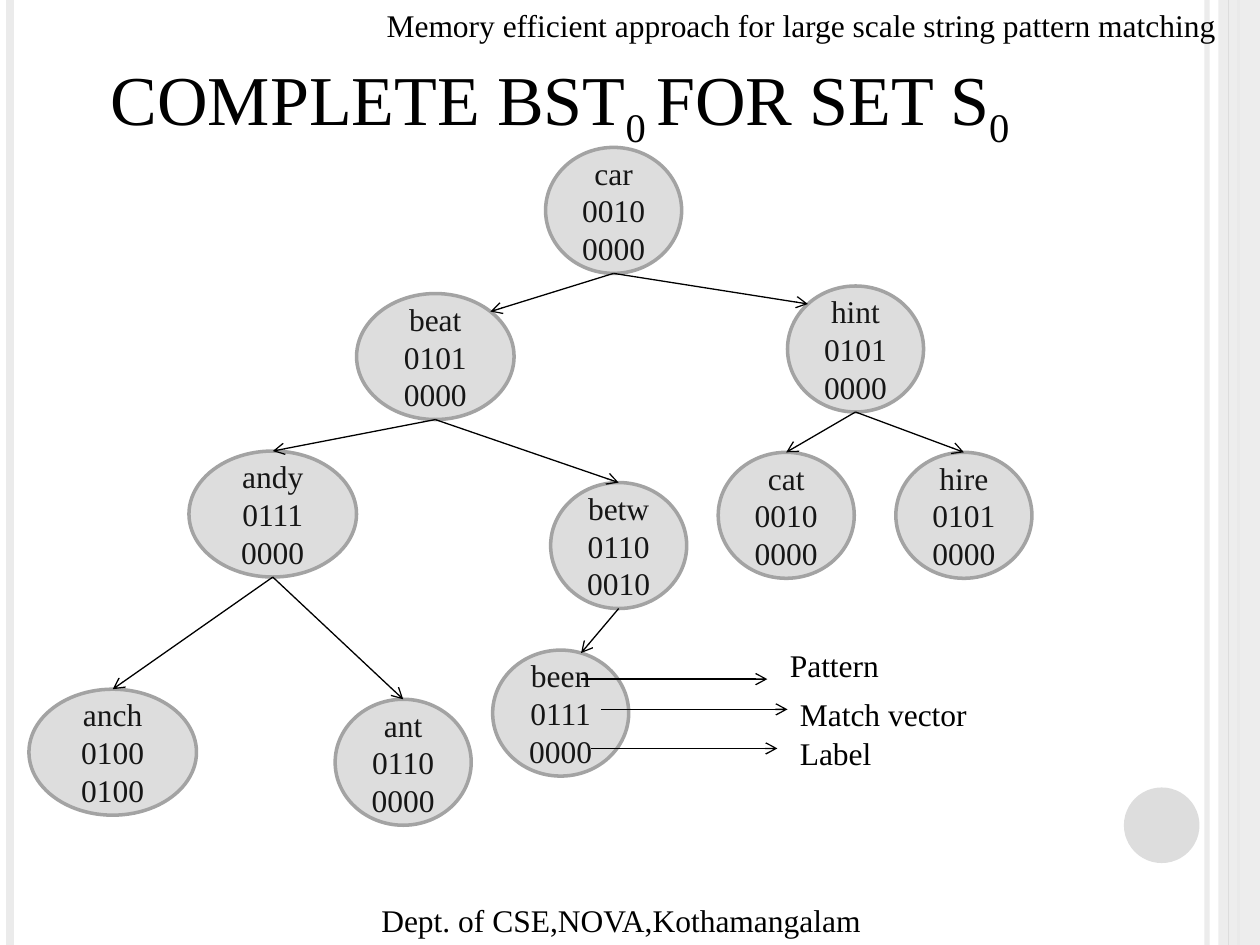
"""Builds a slide that shows the complete binary search tree for a pattern set."""
from math import sqrt

from pptx import Presentation
from pptx.dml.color import RGBColor
from pptx.enum.shapes import MSO_CONNECTOR, MSO_SHAPE
from pptx.enum.text import MSO_ANCHOR, PP_ALIGN
from pptx.oxml.ns import qn
from pptx.util import Inches, Pt
from lxml.etree import SubElement

COLORS = {"text": "000000", "node_text": "161616", "node": "DDDDDD",
          "outline": "A3A3A3", "rail": "EBEBEB", "thin_rail": "DDDDDD"}
FONT = "Times New Roman"
NODE_HEIGHT = 1
SHOULDER = 0.15

NODES = {
    "car": (4.33, 1.17, 1.08, ["00100000"]),
    "beat": (2.83, 2.33, 1.25, ["0101", "0000"]),
    "andy": (1.5, 3.58, 1.33, ["0111", "0000"]),
    "anch": (0.23, 5.47, 1.33, ["0100", "0100"]),
    "ant": (2.66, 5.55, 1.08, ["0110", "0000"]),
    "betw": (4.37, 3.83, 1.08, ["0110", "0010"]),
    "hint": (6.25, 2.27, 1.08, ["0101", "0000"]),
    "cat": (5.7, 3.59, 1.08, ["0010", "0000"]),
    "hire": (7.11, 3.59, 1.08, ["0101", "0000"]),
    "been": (3.91, 5.16, 1.08, ["0111", "0000"]),
}
EDGES = [
    ("car", "beat", 1 - SHOULDER), ("car", "hint", SHOULDER),
    ("beat", "andy", 0.5), ("beat", "betw", 0.5),
    ("andy", "anch", 0.5), ("andy", "ant", 0.5),
    ("hint", "cat", 0.5), ("hint", "hire", 0.5),
    ("betw", "been", 0.65),
]
LEGEND = [
    ("Pattern", 6.17, 5.08, 4.61, 5.39),
    ("Match vector", 6.25, 5.47, 4.77, 5.63),
    ("Label", 6.25, 5.78, 4.69, 5.94),
]
LEGEND_ARROW = 1.48


def add_span(para, text, size=18, color="text", baseline=0):
    """Add a formatted run to a paragraph."""
    span = para.add_run()
    span.text = text
    span.font.name = FONT
    span.font.size = Pt(size)
    span.font.color.rgb = RGBColor.from_string(COLORS[color])
    if baseline:
        span.font._element.set("baseline", str(baseline * 1000))


def set_opacity(element, percent):
    """Give the first colour of an element an opacity."""
    color = element.xpath(".//a:srgbClr")[0]
    SubElement(color, qn("a:alpha")).set("val", str(percent * 1000))


class TreeSlide:
    """Holds the style and the current slide."""

    def __init__(self, deck):
        """Start a page with only a title."""
        self.page = deck.slides.add_slide(deck.slide_layouts[5])

    def title(self, spans, left, top, width, height):
        """Fill the title placeholder with (text, baseline) spans."""
        box = self.page.shapes.title
        box.left, box.top = Inches(left), Inches(top)
        box.width, box.height = Inches(width), Inches(height)
        box.text_frame.vertical_anchor = MSO_ANCHOR.TOP
        para = box.text_frame.paragraphs[0]
        para.alignment = PP_ALIGN.LEFT
        for text, baseline in spans:
            add_span(para, text, size=40, baseline=baseline)

    def text(self, text, left, top, width, align=PP_ALIGN.LEFT):
        """Add a single line of text."""
        box = self.page.shapes.add_textbox(
            Inches(left), Inches(top), Inches(width), Inches(0.4))
        box.text_frame.word_wrap = True
        para = box.text_frame.paragraphs[0]
        para.alignment = align
        add_span(para, text)

    def shape(self, kind, left, top, width, height, fill, outline=None):
        """Add a flat preset shape."""
        shape = self.page.shapes.add_shape(
            kind, Inches(left), Inches(top), Inches(width), Inches(height))
        shape.shadow.inherit = False
        shape.fill.solid()
        shape.fill.fore_color.rgb = RGBColor.from_string(COLORS[fill])
        if outline:
            shape.line.color.rgb = RGBColor.from_string(COLORS[outline])
            shape.line.width = Pt(2)
        else:
            shape.line.fill.background()
        return shape

    def node(self, name):
        """Add a tree node with its pattern, match vector and label."""
        left, top, width, bits = NODES[name]
        shape = self.shape(MSO_SHAPE.OVAL, left, top, width, NODE_HEIGHT,
                           "node", "outline")
        frame = shape.text_frame
        frame.word_wrap = True
        frame.vertical_anchor = MSO_ANCHOR.MIDDLE
        for index, text in enumerate([name] + bits):
            para = frame.add_paragraph() if index else frame.paragraphs[0]
            para.alignment = PP_ALIGN.CENTER
            add_span(para, text, color="node_text")

    def line(self, start, end, color="text", weight=0.75):
        """Add a straight line between two points."""
        line = self.page.shapes.add_connector(
            MSO_CONNECTOR.STRAIGHT, *map(Inches, start + end))
        line.line.color.rgb = RGBColor.from_string(COLORS[color])
        line.line.width = Pt(weight)
        SubElement(line._element.spPr, qn("a:effectLst"))
        return line

    def arrow(self, start, end):
        """Add a line with an open head at its end."""
        outline = self.line(start, end).line._get_or_add_ln()
        SubElement(outline, qn("a:tailEnd")).set("type", "arrow")

    def edge(self, parent, child, across):
        """Point from the foot of a parent to the upper rim of a child."""
        left, top, width, _ = NODES[parent]
        start = (left + width / 2, top + NODE_HEIGHT)
        left, top, width, _ = NODES[child]
        drop = NODE_HEIGHT / 2 * (1 - sqrt(1 - (2 * across - 1) ** 2))
        self.arrow(start, (left + width * across, top + drop))

    def rail(self, x, color, weight):
        """Add a vertical line over the full height."""
        return self.line((x, 0), (x, 7.5), color, weight)

    def background(self):
        """Add the rails, side band and corner disc."""
        set_opacity(self.rail(9.58, "rail", 3)._element, 93)
        self.rail(0.08, "rail", 4.5)
        self.rail(9.83, "thin_rail", 1.5)
        band = self.shape(MSO_SHAPE.RECTANGLE, 9.67, 0, 0.33, 7.5, "rail")
        set_opacity(band._element, 87)
        self.rail(9.75, "thin_rail", 0.75)
        self.shape(MSO_SHAPE.OVAL, 8.92, 6.25, 0.6, 0.6, "node")


def main():
    """Build and save the deck."""
    deck = Presentation()
    deck.slide_width, deck.slide_height = Inches(10), Inches(7.5)
    slide = TreeSlide(deck)
    slide.background()
    for name in NODES:
        slide.node(name)
    for edge in EDGES:
        slide.edge(*edge)
    for label, left, top, x, y in LEGEND:
        slide.arrow((x, y), (x + LEGEND_ARROW, y))
        slide.text(label, left, top, 2.2)
    slide.title([("COMPLETE BST", 0), ("0 ", -25), ("FOR SET S", 0), ("0", -25)],
                0.78, 0.39, 8.44, 0.77)
    slide.text("Dept. of CSE,NOVA,Kothamangalam", 2.89, 7.1, 4.08, PP_ALIGN.CENTER)
    slide.text("Memory efficient approach for large scale string pattern matching",
               2.97, 0, 7.03)
    deck.save("out.pptx")


if __name__ == "__main__":
    main()
